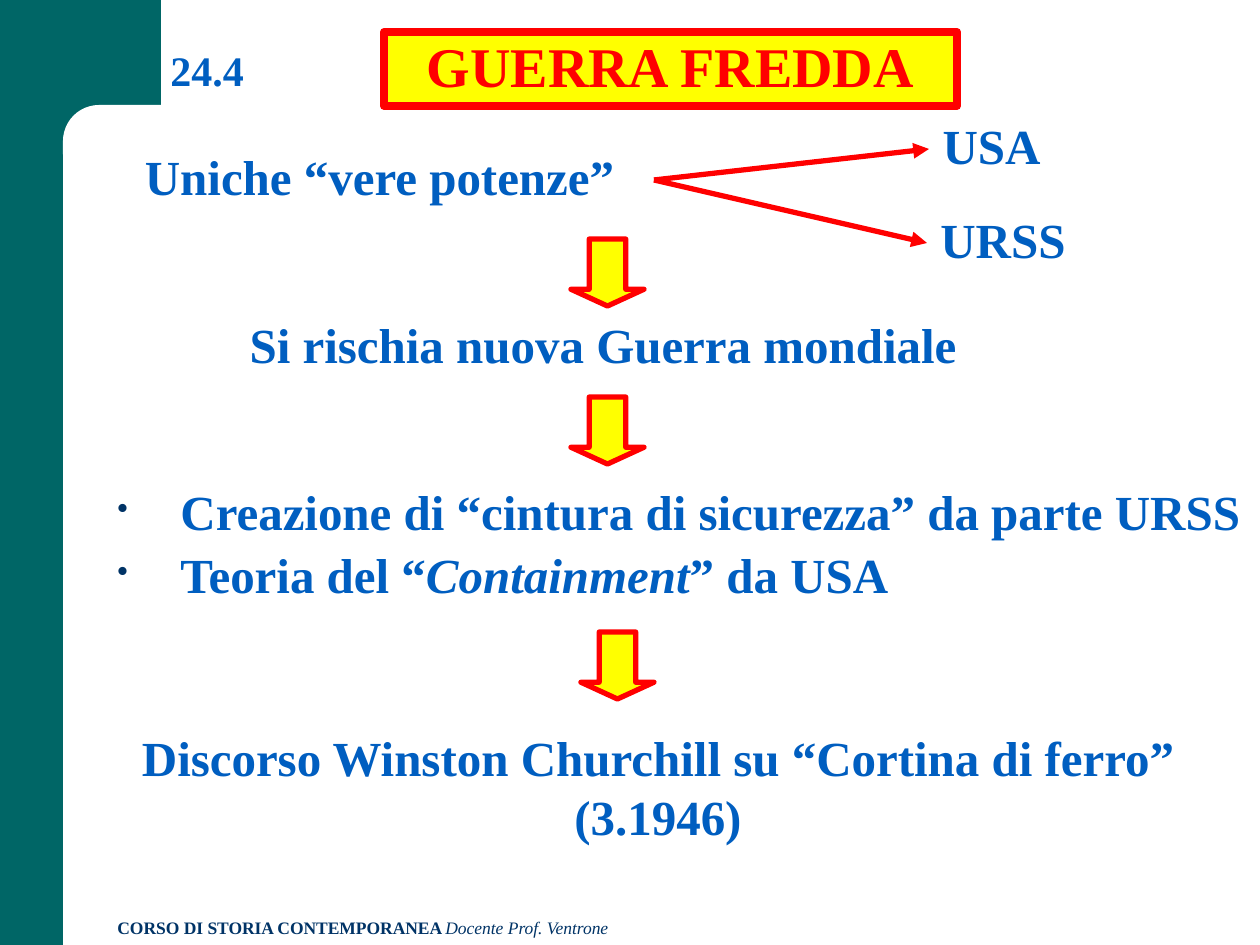
from lxml import etree
from pptx import Presentation, util as u
from pptx.dml.color import RGBColor
from pptx.enum import shapes, text
from pptx.oxml import ns

PX_PER_INCH = 126
TEAL, WHITE, NAVY, BLUE, RED, YELLOW = "006666", "FFFFFF", "003366", "005EC0", "FF0000", "FFFF00"
SHAPE = shapes.MSO_SHAPE
MIDDLE = text.MSO_ANCHOR.MIDDLE
LEFT, CENTER, JUSTIFY = text.PP_ALIGN.LEFT, text.PP_ALIGN.CENTER, text.PP_ALIGN.JUSTIFY


def px(length):
    return u.Emu(round(length * 914400 / PX_PER_INCH))


def rgb(value):
    return RGBColor.from_string(value)


def add_child(parent, tag, **attributes):
    return etree.SubElement(parent, ns.qn(tag), attributes)


def add_block(page, kind, bounds, fill, line=None, width=3, adjustments=()):
    block = page.shapes.add_shape(kind, *map(px, bounds))
    block.shadow.inherit = False
    block.fill.solid()
    block.fill.fore_color.rgb = rgb(fill)
    if line:
        block.line.color.rgb = rgb(line)
        block.line.width = u.Pt(width)
    else:
        block.line.fill.background()
    for index, value in enumerate(adjustments):
        block.adjustments[index] = value
    return block


def style_span(span, size, color, bold=True, italic=False):
    span.font.name = "Times New Roman"
    span.font.size = u.Pt(size)
    span.font.bold = bold
    span.font.italic = italic
    span.font.color.rgb = rgb(color)


def write_para(para, words, size=28, color=BLUE, align=CENTER, spacing=0.9):
    para.text = words
    para.alignment = align
    para.line_spacing = spacing
    for span in para.runs:
        style_span(span, size, color)


def add_span(para, words, size, color, **style):
    span = para.add_run()
    span.text = words
    style_span(span, size, color, **style)


def add_box(page, bounds, words, anchor=MIDDLE, wrap=True, **style):
    box = page.shapes.add_textbox(*map(px, bounds))
    box.text_frame.word_wrap = wrap
    box.text_frame.vertical_anchor = anchor
    write_para(box.text_frame.paragraphs[0], words, **style)
    return box


def add_bullet(para):
    properties = para._p.get_or_add_pPr()
    properties.set("marL", str(px(63)))
    properties.set("indent", str(-px(63)))
    color = add_child(properties, "a:buClr")
    add_child(color, "a:srgbClr", val=NAVY)
    add_child(properties, "a:buSzPct", val="64000")
    add_child(properties, "a:buChar", char="•")


def add_arrow(page, source, target):
    arrow = page.shapes.add_connector(shapes.MSO_CONNECTOR.STRAIGHT, 0, 0, 0, 0)
    arrow.begin_connect(source, 3)
    arrow.end_connect(target, 1)
    arrow.line.color.rgb = rgb(RED)
    arrow.line.width = u.Pt(3)
    add_child(arrow.line._get_or_add_ln(), "a:tailEnd", type="triangle")
    add_child(arrow._element.spPr, "a:effectLst")


def add_frame(page):
    add_block(page, SHAPE.RECTANGLE, (0, 0, 63, 945), TEAL)
    add_block(page, SHAPE.RECTANGLE, (0, 0, 161, 147), TEAL)
    add_block(page, SHAPE.ROUNDED_RECTANGLE, (63, 105, 746, 84), WHITE, adjustments=[0.43])
    footer = add_box(page, (105, 911, 777, 34), "CORSO DI STORIA CONTEMPORANEA ",
                     anchor=text.MSO_ANCHOR.TOP, size=10, color=NAVY, align=LEFT, spacing=1.0)
    add_span(footer.text_frame.paragraphs[0], "Docente Prof. Ventrone", 10, NAVY,
             bold=False, italic=True)


def add_heading(page):
    add_box(page, (158, 39, 121, 63), "24.4", anchor=text.MSO_ANCHOR.BOTTOM, size=24, align=LEFT)
    heading = add_block(page, SHAPE.RECTANGLE, (384, 32, 573, 74), YELLOW, RED, 4.5)
    heading.text_frame.vertical_anchor = MIDDLE
    write_para(heading.text_frame.paragraphs[0], "GUERRA FREDDA", size=32, color=RED)


def add_powers(page):
    powers = add_box(page, (105, 147, 549, 66), "Uniche “vere potenze”")
    for name, bounds in (("USA", (929, 116, 125, 66)), ("URSS", (927, 210, 152, 66))):
        add_arrow(page, powers, add_box(page, bounds, name, wrap=False))


def add_policies(page):
    box = add_box(page, (105, 483, 1155, 127),
                  "Creazione di “cintura di sicurezza” da parte URSS", align=JUSTIFY)
    theory = box.text_frame.add_paragraph()
    write_para(theory, "Teoria del “", align=JUSTIFY)
    theory.space_before = u.Pt(5.6)
    add_span(theory, "Containment", 28, BLUE, italic=True)
    add_span(theory, "” da USA", 28, BLUE)
    for para in box.text_frame.paragraphs:
        add_bullet(para)


def main():
    deck = Presentation()
    deck.slide_width, deck.slide_height = px(1260), px(945)
    page = deck.slides.add_slide(deck.slide_layouts[6])
    add_frame(page)
    add_heading(page)
    add_powers(page)
    add_box(page, (20, 315, 1166, 66), "Si rischia nuova Guerra mondiale")
    for left, top in ((571, 239), (571, 397), (581, 632)):
        add_block(page, SHAPE.DOWN_ARROW, (left, top, 73, 67), YELLOW, RED,
                  adjustments=[0.5, 0.25])
    add_policies(page)
    add_box(page, (117, 721, 1082, 131),
            "Discorso Winston Churchill su “Cortina di ferro” (3.1946)",
            anchor=text.MSO_ANCHOR.TOP, spacing=1.0)
    deck.save("out.pptx")


if __name__ == "__main__":
    main()
